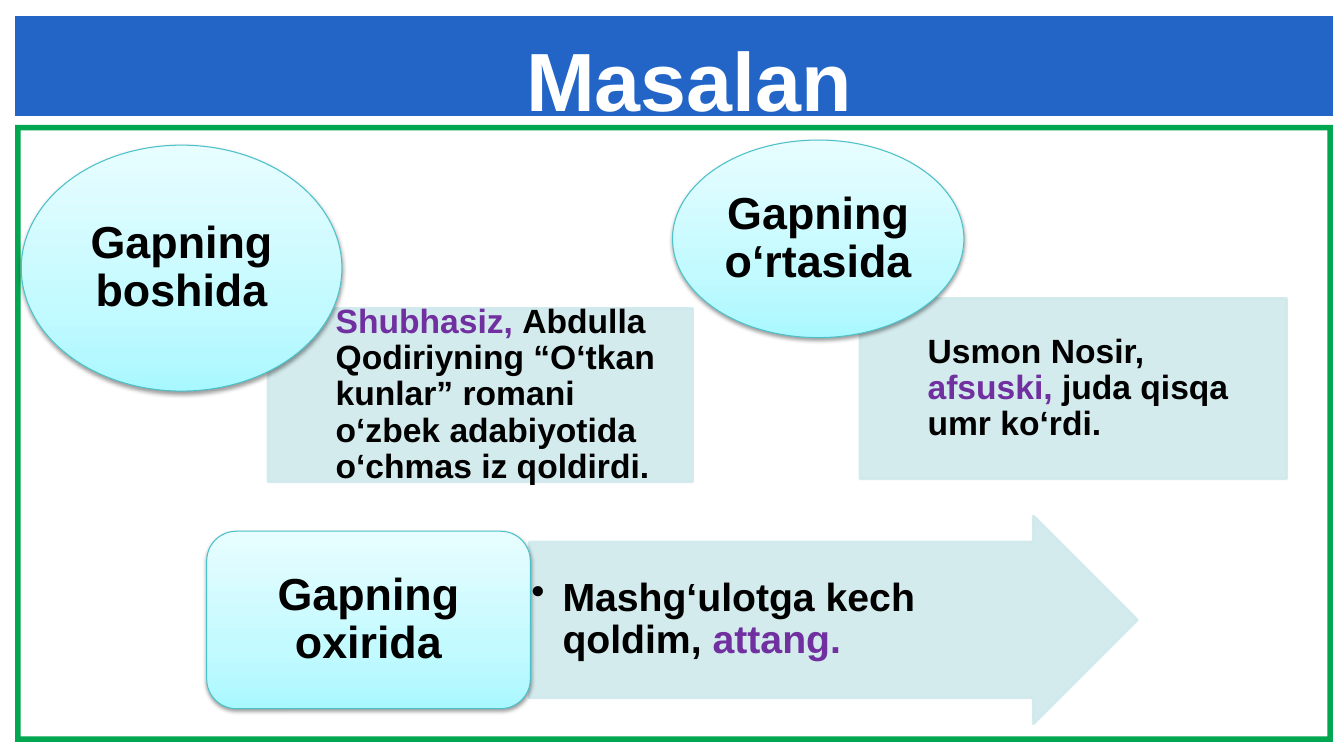
import pptx
import pptx.util
import pptx.dml.color
import pptx.enum.shapes
import pptx.enum.text
import pptx.oxml
import pptx.oxml.ns
from lxml import etree

SHAPE = pptx.enum.shapes.MSO_SHAPE
ALIGN = pptx.enum.text.PP_ALIGN
ANCHOR = pptx.enum.text.MSO_ANCHOR
qn = pptx.oxml.ns.qn

# Content: boxes are left, top, width, height in percent of the slide
TITLE = "Masalan"
TITLE_BOX = (17.48, 2.27, 67.59, 14.53)
BAND_BOX = (1.13, 2.13, 98.05, 13.2)
FRAME_BOX = (1.13, 16.53, 98.05, 81.6)

BLACK, WHITE, PURPLE = "000000", "FFFFFF", "7030A0"
BLUE, GREEN, PALE, TEAL = "2365C7", "00A650", "D0E9EC", "4CC1C9"
LABEL_STOPS = [(0, "AAF8FF"), (35, "C3FAFF"), (100, "E8FDFF")]

PANEL_INSETS = (0.67, 0.19, 0.19, 0.19)
ARROW_INSETS = (0.02, 0.02, 0.02, 0.02)
ROUND_INSETS = (0.04, 0, 0.04, 0)
NO_INSETS = (0, 0, 0, 0)

EXAMPLES = [
    {"panel": (SHAPE.RECTANGLE, (19.95, 40.8, 31.58, 22.93), PANEL_INSETS),
     "text": [("Shubhasiz, ", PURPLE),
              ("Abdulla Qodiriyning “O‘tkan kunlar” romani o‘zbek "
               "adabiyotida o‘chmas iz qoldirdi.", BLACK)],
     "size": 24, "bullet": False,
     "label": (SHAPE.OVAL, (1.58, 19.2, 23.86, 32.53), NO_INSETS),
     "name": "Gapning boshida"},
    {"panel": (SHAPE.RECTANGLE, (63.99, 39.47, 31.73, 23.87), PANEL_INSETS),
     "text": [("Usmon Nosir, ", BLACK), ("afsuski, ", PURPLE),
              ("juda qisqa umr ko‘rdi.", BLACK)],
     "size": 24, "bullet": False,
     "label": (SHAPE.OVAL, (50.04, 18.53, 21.68, 26.13), NO_INSETS),
     "name": "Gapning o‘rtasida"},
    {"panel": (SHAPE.RIGHT_ARROW, (39.38, 68.27, 45.24, 27.47), ARROW_INSETS),
     "text": [("Mashg‘ulotga kech qoldim, ", BLACK), ("attang.", PURPLE)],
     "size": 28, "bullet": True,
     "label": (SHAPE.ROUNDED_RECTANGLE, (15.38, 70.27, 24.08, 23.47),
               ROUND_INSETS),
     "name": "Gapning oxirida"},
]

prs = pptx.Presentation()
prs.slide_width = pptx.util.Inches(13.33)
prs.slide_height = pptx.util.Inches(7.5)
s = prs.slides.add_slide(prs.slide_layouts[5])


def color(hex_code):
    return pptx.dml.color.RGBColor.from_string(hex_code)


def place(box):
    sides = (prs.slide_width, prs.slide_height) * 2
    return [int(part * side / 100) for part, side in zip(box, sides)]


def add_shape(kind, box, fill, line=None, width=0):
    sp = s.shapes.add_shape(kind, *place(box))
    sp.shadow.inherit = False
    sp.fill.solid()
    sp.fill.fore_color.rgb = color(fill)
    if line:
        sp.line.color.rgb = color(line)
        sp.line.width = pptx.util.Pt(width)
    else:
        sp.line.fill.background()
    return sp


def write(sp, runs, size, align, insets, anchor=ANCHOR.MIDDLE, spacing=0.9):
    tf = sp.text_frame
    tf.word_wrap = True
    tf.auto_size = pptx.enum.text.MSO_AUTO_SIZE.NONE
    tf.vertical_anchor = anchor
    (tf.margin_left, tf.margin_top,
     tf.margin_right, tf.margin_bottom) = map(pptx.util.Inches, insets)
    p = tf.paragraphs[0]
    p.alignment = align
    p.line_spacing = spacing
    for text, hex_code in runs:
        r = p.add_run()
        r.text = text
        r.font.name = "Arial"
        r.font.size = pptx.util.Pt(size)
        r.font.bold = True
        r.font.color.rgb = color(hex_code)
    return p


def add_bullet(p):
    props = p._p.get_or_add_pPr()
    indent = pptx.util.Inches(0.31)
    props.set("marL", str(indent))
    props.set("indent", str(-indent))
    etree.SubElement(props, qn("a:buChar")).set("char", "•")


def add_alpha(parent, percent):
    etree.SubElement(parent, qn("a:alpha")).set("val", str(percent * 1000))


def add_panel(kind, box, insets, runs, size, bullet):
    sp = add_shape(kind, box, PALE, PALE, 2)
    if kind == SHAPE.RIGHT_ARROW:
        sp.adjustments[0], sp.adjustments[1] = 0.75, 0.5
    for clr in sp.element.spPr.iter(qn("a:srgbClr")):
        add_alpha(clr, 90)
    p = write(sp, runs, size, ALIGN.LEFT, insets)
    if bullet:
        add_bullet(p)


def add_label(kind, box, insets, name):
    sp = add_shape(kind, box, PALE, TEAL, 0.75)
    # Three-stop gradient
    sp.fill.gradient()
    sp.fill.gradient_angle = 90
    stops = sp.element.spPr.find(".//" + qn("a:gsLst"))
    for stop in list(stops):
        stops.remove(stop)
    for position, hex_code in LABEL_STOPS:
        stop = etree.SubElement(stops, qn("a:gs"), pos=str(position * 1000))
        etree.SubElement(stop, qn("a:srgbClr"), val=hex_code)
    # Soft shadow below
    effects = sp.element.spPr.find(qn("a:effectLst"))
    shadow = etree.SubElement(
        effects, qn("a:outerShdw"), blurRad=str(pptx.util.Pt(3.1)),
        dist=str(pptx.util.Pt(1.6)), dir="5400000", rotWithShape="0")
    add_alpha(etree.SubElement(shadow, qn("a:srgbClr"), val=BLACK), 38)
    write(sp, [(name, BLACK)], 32, ALIGN.CENTER, insets)


# Frame and title band
frame = add_shape(SHAPE.FRAME, FRAME_BOX, GREEN)
frame.adjustments[0] = 0.009
add_shape(SHAPE.RECTANGLE, BAND_BOX, BLUE)

# Title, raised above its band
title = s.shapes.title
title.left, title.top, title.width, title.height = place(TITLE_BOX)
write(title, [(TITLE, WHITE)], 59, ALIGN.CENTER, (0.1, 0.12, 0.1, 0),
      ANCHOR.TOP, 1.0)
title.element.getparent().append(title.element)

# Examples, each label over its panel
for example in EXAMPLES:
    add_panel(*example["panel"], example["text"], example["size"],
              example["bullet"])
    add_label(*example["label"], example["name"])

prs.save("out.pptx")
